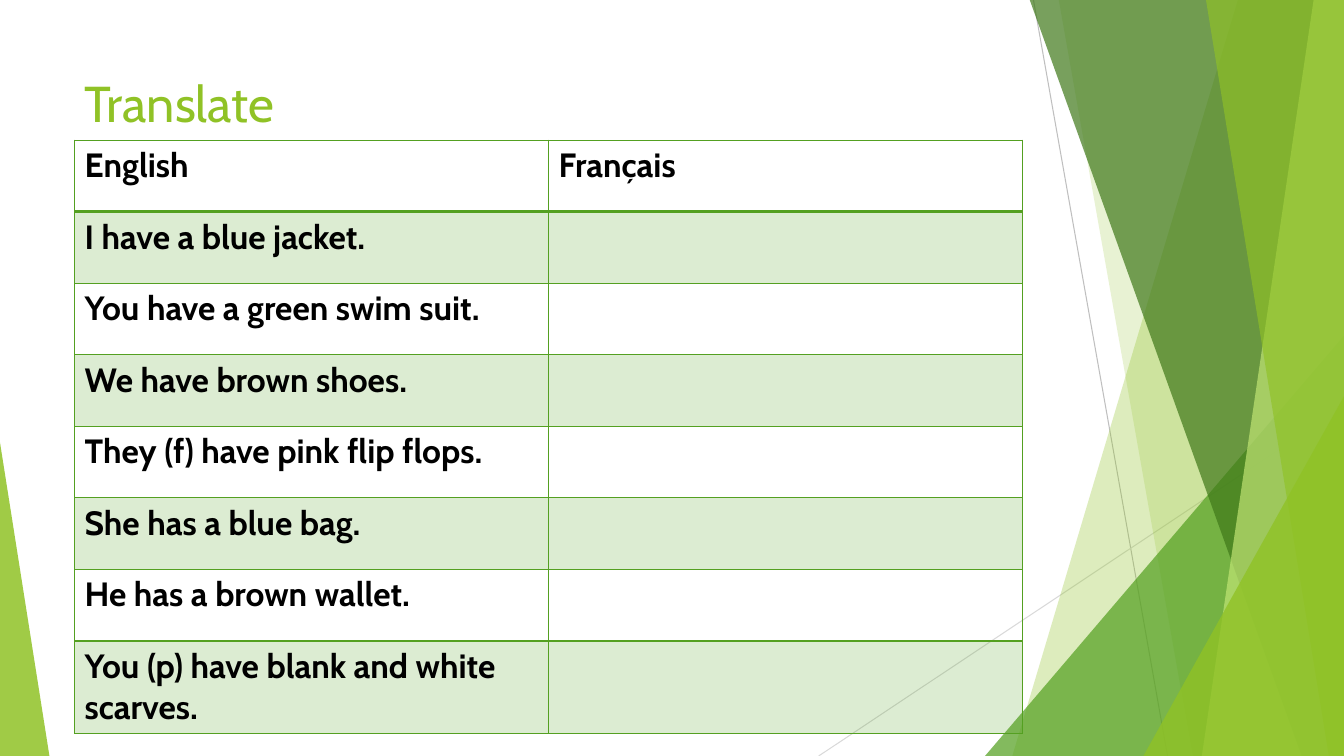
from lxml.etree import SubElement
from pptx import Presentation
from pptx.dml.color import RGBColor
from pptx.enum.shapes import MSO_CONNECTOR as CONNECTOR, MSO_SHAPE as SHAPE
from pptx.enum.text import MSO_ANCHOR as ANCHOR
from pptx.oxml.ns import qn
from pptx.util import Pt

PX = 9144
FONT = "Cabin"
LIME = RGBColor(0x90, 0xC2, 0x26)
GREEN = RGBColor(0x54, 0xA0, 0x21)
DARK_GREEN = RGBColor(0x3F, 0x78, 0x19)
PALE_LIME = RGBColor(0xC0, 0xE4, 0x74)
GREY = RGBColor(0xBF, 0xBF, 0xBF)
LIGHT_GREY = RGBColor(0xD9, 0xD9, 0xD9)
BLACK = RGBColor(0, 0, 0)

RIGHT, BOTTOM, TOP = 1333, 750, -1
ROW_HEIGHT, LAST_ROW_HEIGHT, COLUMN_WIDTH = 71, 92, 470
ROWS = [
    ("English", "Français"),
    ("I have a blue jacket.", ""),
    ("You have a green swim suit.", ""),
    ("We have brown shoes.", ""),
    ("They (f) have pink flip flops.", ""),
    ("She has a blue bag.", ""),
    ("He has a brown wallet.", ""),
    ("You (p) have blank and white scarves.", ""),
]


def px(*lengths):
    return [length * PX for length in lengths]


def fill_with(fill, color, opacity):
    fill.solid()
    fill.fore_color.rgb = color
    color_node = fill._xPr.find(qn("a:solidFill"))[0]
    SubElement(color_node, qn("a:alpha"), val=str(opacity * 1000))


def finish_facet(sp, color, opacity):
    fill_with(sp.fill, color, opacity)
    sp.line.fill.background()
    sp.shadow.inherit = False


def add_ray(slide, start, end, color):
    line = slide.shapes.add_connector(CONNECTOR.STRAIGHT, *px(*start, *end))
    line.line.color.rgb = color
    line.line.width = Pt(0.75)
    SubElement(line._element.spPr, qn("a:effectLst"))


def add_band(slide, top_left, bottom_left, color, opacity):
    builder = slide.shapes.build_freeform(top_left, TOP, scale=PX)
    builder.add_line_segments(
        [(RIGHT, TOP), (RIGHT, BOTTOM), (bottom_left, BOTTOM)], close=True)
    finish_facet(builder.convert_to_shape(), color, opacity)


def add_triangle(slide, left, top, width, apex, color, opacity):
    sp = slide.shapes.add_shape(
        SHAPE.ISOSCELES_TRIANGLE, *px(left, top, width, BOTTOM - top))
    sp.adjustments[0] = apex
    finish_facet(sp, color, opacity)


def add_run(p, text, size, color, bold=False):
    r = p.add_run()
    r.text = text
    r.font.name = FONT
    r.font.size = Pt(size)
    r.font.bold = bold
    r.font.color.rgb = color


def add_title(slide, text):
    tf = slide.shapes.add_textbox(*px(74, 67, 940, 144)).text_frame
    tf.word_wrap = True
    tf.vertical_anchor = ANCHOR.TOP
    add_run(tf.paragraphs[0], text, 36, LIME)


def add_borders(cell, widths):
    tc_pr = cell._tc.get_or_add_tcPr()
    for side, width in zip("LRTB", widths):
        ln = SubElement(tc_pr, qn(f"a:ln{side}"), w=str(Pt(width)))
        solid = SubElement(ln, qn("a:solidFill"))
        SubElement(solid, qn("a:srgbClr"), val=str(GREEN))


def add_phrase_table(slide):
    height = ROW_HEIGHT * (len(ROWS) - 1) + LAST_ROW_HEIGHT
    table = slide.shapes.add_table(
        len(ROWS), 2, *px(74, 139, 2 * COLUMN_WIDTH, height)).table
    table.first_row = table.horz_banding = False
    for column in table.columns:
        column.width = COLUMN_WIDTH * PX
    for i, phrases in enumerate(ROWS):
        last = i == len(ROWS) - 1
        table.rows[i].height = (LAST_ROW_HEIGHT if last else ROW_HEIGHT) * PX
        for j, phrase in enumerate(phrases):
            cell = table.cell(i, j)
            add_borders(cell, (1, 1, 2 if i == 1 else 1, 2 if i == 0 else 1))
            if i % 2:
                fill_with(cell.fill, GREEN, 20)
            else:
                cell.fill.background()
            if phrase:
                add_run(cell.text_frame.paragraphs[0], phrase, 24, BLACK, True)


def main():
    prs = Presentation()
    prs.slide_width, prs.slide_height = px(RIGHT, BOTTOM)
    slide = prs.slides.add_slide(prs.slide_layouts[6])
    add_ray(slide, (1025, 0), (1158, BOTTOM), GREY)
    add_ray(slide, (RIGHT, 403), (812, BOTTOM), LIGHT_GREY)
    add_band(slide, 1228, 1004, LIME, 30)
    add_band(slide, 1050, 1183, LIME, 20)
    add_triangle(slide, 977, 333, 356, 1, GREEN, 72)
    add_band(slide, 1021, 1291, DARK_GREEN, 70)
    add_band(slide, 1303, 1192, PALE_LIME, 70)
    add_band(slide, 1196, 1318, LIME, 65)
    add_triangle(slide, 1134, 393, 199, 1, LIME, 80)
    add_triangle(slide, 0, 439, 49, 0, LIME, 85)
    add_title(slide, "Translate")
    add_phrase_table(slide)
    prs.save("out.pptx")


if __name__ == "__main__":
    main()
